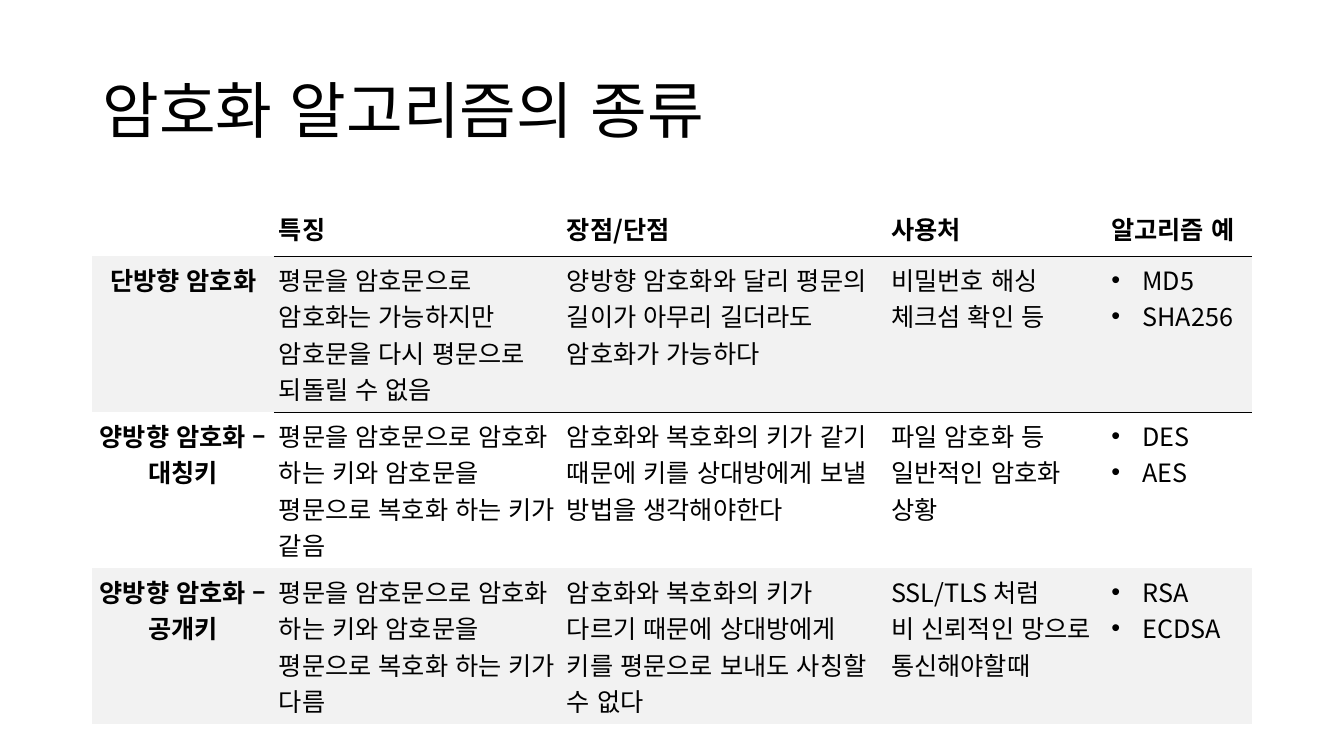
from lxml import etree
from pptx import Presentation
from pptx.dml.color import RGBColor
from pptx.enum.lang import MSO_LANGUAGE_ID
from pptx.enum.text import MSO_ANCHOR, MSO_AUTO_SIZE, PP_ALIGN
from pptx.oxml.ns import qn
from pptx.util import Inches, Pt

LEFT, CENTER = PP_ALIGN.LEFT, PP_ALIGN.CENTER
TOP, MIDDLE = MSO_ANCHOR.TOP, MSO_ANCHOR.MIDDLE
NO_AUTOFIT = MSO_AUTO_SIZE.NONE
KOREAN = MSO_LANGUAGE_ID.KOREAN
TITLE_ONLY = 5
PLAIN_TABLE = "{2D5ABB26-0587-4C30-8999-92F81FD0307C}"
SLIDE_WIDTH, SLIDE_HEIGHT = Inches(13.33), Inches(7.5)
GRID_COLUMNS, GRID_ROWS = 160, 90

TITLE = "암호화 알고리즘의 종류"
HEADINGS = ["", "특징", "장점/단점", "사용처", "알고리즘 예"]
ALGORITHM_KINDS = [
    ["단방향 암호화",
     "평문을 암호문으로 암호화는 가능하지만 암호문을 다시 평문으로 되돌릴 수 없음",
     "양방향 암호화와 달리 평문의 길이가 아무리 길더라도 암호화가 가능하다",
     "비밀번호 해싱\n체크섬 확인 등",
     "MD5\nSHA256"],
    ["양방향 암호화 –\n대칭키",
     "평문을 암호문으로 암호화 하는 키와 암호문을 평문으로 복호화 하는 키가 같음",
     "암호화와 복호화의 키가 같기 때문에 키를 상대방에게 보낼 방법을 생각해야한다",
     "파일 암호화 등\n일반적인 암호화 상황",
     "DES\nAES"],
    ["양방향 암호화 –\n공개키",
     "평문을 암호문으로 암호화\n하는 키와 암호문을 평문으로 복호화 하는 키가 다름",
     "암호화와 복호화의 키가 다르기 때문에 상대방에게 키를 평문으로 보내도 사칭할 수 없다",
     "SSL/TLS 처럼\n비 신뢰적인 망으로\n통신해야할때",
     "RSA\nECDSA"],
]
COLUMN_SPANS = [21.6, 34.3, 38.6, 26.2, 17.3]
ROW_SPANS = [6.5, 13.7, 13.7, 13.7]


def color(hex_string):
    return RGBColor.from_string(hex_string)


def apply(target, values):
    for name, value in values.items():
        setattr(target, name, value)


class SlideBuilder:
    font_name = "Noto Sans CJK KR"
    ink = "000000"
    band = "F2F2F2"
    cell_inset = Inches(0.05)
    bullet_indent = Inches(0.31)

    def __init__(self, presentation):
        self.slide = presentation.slides.add_slide(
            presentation.slide_layouts[TITLE_ONLY])

    def across(self, columns):
        return round(SLIDE_WIDTH * columns / GRID_COLUMNS)

    def down(self, rows):
        return round(SLIDE_HEIGHT * rows / GRID_ROWS)

    def frame(self, left, top, width, height):
        return {"left": self.across(left), "top": self.down(top),
                "width": self.across(width), "height": self.down(height)}

    def set_text(self, text_frame, text, size, bold=False, bulleted=False, **layout):
        text_frame.text = text
        for paragraph in text_frame.paragraphs:
            apply(paragraph, layout)
            if bulleted:
                self.bullet(paragraph)
            for run in paragraph.runs:
                apply(run.font, {"name": self.font_name, "size": Pt(size),
                                 "bold": bold, "language_id": KOREAN})
                run.font.color.rgb = color(self.ink)
                east_asian = etree.Element(qn("a:ea"), typeface=self.font_name)
                run._r.rPr.find(qn("a:latin")).addnext(east_asian)

    def bullet(self, paragraph):
        properties = paragraph._p.get_or_add_pPr()
        properties.set("marL", str(self.bullet_indent))
        properties.set("indent", str(-self.bullet_indent))
        etree.SubElement(properties, qn("a:buFont"), typeface="Arial")
        etree.SubElement(properties, qn("a:buChar"), char="•")

    def title(self, text, *place):
        heading = self.slide.shapes.title
        apply(heading, self.frame(*place))
        apply(heading.text_frame, {"vertical_anchor": MIDDLE, "word_wrap": True,
                                   "auto_size": NO_AUTOFIT})
        self.set_text(heading.text_frame, text, 44, alignment=LEFT, line_spacing=0.9)

    def rule(self, cell, side):
        line = etree.Element(qn(f"a:{side}"), w=str(Pt(1)))
        fill = etree.SubElement(line, qn("a:solidFill"))
        etree.SubElement(fill, qn("a:srgbClr"), val=self.ink)
        cell._tc.get_or_add_tcPr().insert(0, line)

    def cell(self, cell, text, row, column):
        apply(cell, {"margin_left": self.cell_inset, "margin_right": self.cell_inset,
                     "margin_top": self.cell_inset, "margin_bottom": self.cell_inset,
                     "vertical_anchor": TOP if row else MIDDLE})
        if row % 2:
            cell.fill.solid()
            cell.fill.fore_color.rgb = color(self.band)
        else:
            cell.fill.background()
        if column and row < 2:
            self.rule(cell, "lnT" if row else "lnB")
        self.set_text(cell.text_frame, text, 18, bold=row == 0 or column == 0,
                      bulleted=row > 0 and column == len(HEADINGS) - 1,
                      alignment=LEFT if column else CENTER)

    def table(self, rows, left, top):
        place = self.frame(left, top, sum(COLUMN_SPANS), sum(ROW_SPANS))
        table = self.slide.shapes.add_table(len(rows), len(rows[0]), **place).table
        apply(table, {"first_row": False, "horz_banding": False})
        table._tbl.tblPr.find(qn("a:tableStyleId")).text = PLAIN_TABLE
        for column, span in zip(table.columns, COLUMN_SPANS):
            column.width = self.across(span)
        for row, span in zip(table.rows, ROW_SPANS):
            row.height = self.down(span)
        for row, texts in enumerate(rows):
            for column, text in enumerate(texts):
                self.cell(table.cell(row, column), text, row, column)


def main():
    presentation = Presentation()
    apply(presentation, {"slide_width": SLIDE_WIDTH, "slide_height": SLIDE_HEIGHT})
    builder = SlideBuilder(presentation)
    builder.title(TITLE, 11, 4.8, 138, 17.4)
    builder.table([HEADINGS, *ALGORITHM_KINDS], 11, 24)
    presentation.save("out.pptx")


if __name__ == "__main__":
    main()
